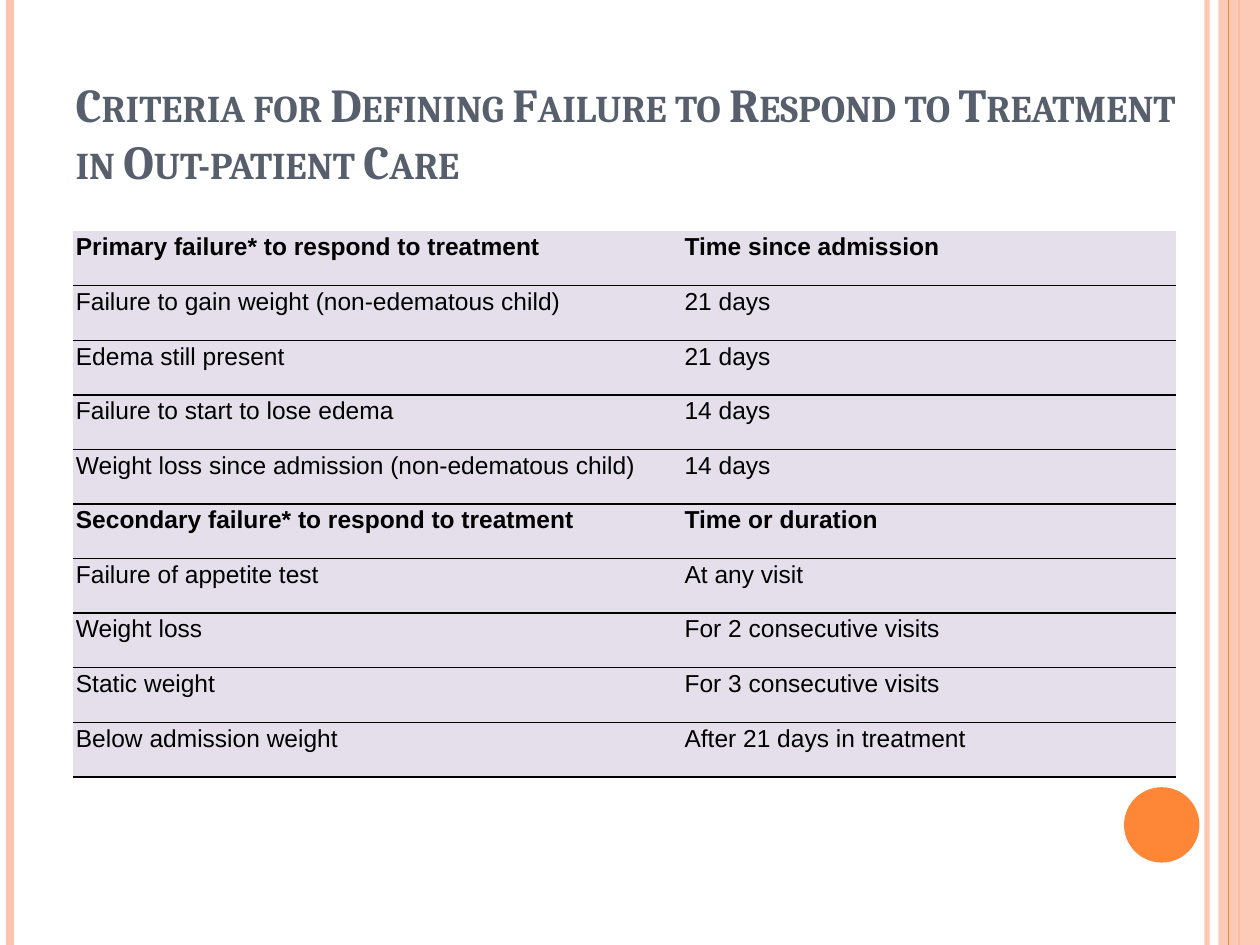
import dataclasses

import lxml.etree
import pptx
import pptx.dml.color
import pptx.enum.shapes
import pptx.enum.text
import pptx.oxml
import pptx.oxml.ns
import pptx.util

Cm, Pt = pptx.util.Cm, pptx.util.Pt
qn = pptx.oxml.ns.qn


@dataclasses.dataclass(frozen=True)
class Theme:
    """Colours, fonts and type sizes of the slide."""
    orange: str = "FE8637"
    peach: str = "FEC3AE"
    slate: str = "575F6D"
    lilac: str = "E5DFEC"
    black: str = "000000"
    title_font: str = "Cambria"
    body_font: str = "Arial"
    title_size: float = 27
    body_size: float = 14


THEME = Theme()
NO_GRID_STYLE = "{2D5ABB26-0587-4C30-8999-92F81FD0307C}"
TITLE = "Criteria for Defining Failure to Respond to Treatment in Out-patient Care"
CRITERIA = [
    ("Primary failure* to respond to treatment", "Time since admission"),
    ("Failure to gain weight (non-edematous child)", "21 days"),
    ("Edema still present", "21 days"),
    ("Failure to start to lose edema", "14 days"),
    ("Weight loss since admission (non-edematous child)", "14 days"),
    ("Secondary failure* to respond to treatment", "Time or duration"),
    ("Failure of appetite test", "At any visit"),
    ("Weight loss", "For 2 consecutive visits"),
    ("Static weight", "For 3 consecutive visits"),
    ("Below admission weight", "After 21 days in treatment"),
]
HEADING_ROWS = (0, 5)


def rgb(color):
    """Turn a hex string into a colour."""
    return pptx.dml.color.RGBColor.from_string(color)


def write(tf, text, *, size, font, color, bold=False, small_caps=False, align=None):
    """Put one formatted run of text into a text frame."""
    p = tf.paragraphs[0]
    p.alignment = align
    r = p.add_run()
    r.text = text
    r.font.size, r.font.name, r.font.bold = Pt(size), font, bold
    r.font.color.rgb = rgb(color)
    if small_caps:
        r._r.get_or_add_rPr().set("cap", "small")


def set_alpha(sp, percent):
    """Make the solid colour of a shape's fill or line partly transparent."""
    clr = next(sp._element.spPr.iter(qn("a:srgbClr")))
    lxml.etree.SubElement(clr, qn("a:alpha")).set("val", str(percent * 1000))


def add_stripe(s, x, top, height, color, weight, alpha=None):
    """Draw a vertical line."""
    straight = pptx.enum.shapes.MSO_CONNECTOR.STRAIGHT
    line = s.shapes.add_connector(straight, Cm(x), Cm(top), Cm(x), Cm(top + height))
    line.line.color.rgb, line.line.width = rgb(color), Pt(weight)
    lxml.etree.SubElement(line._element.spPr, qn("a:effectLst"))
    if alpha:
        set_alpha(line, alpha)


def add_solid(s, kind, left, top, width, height, color):
    """Draw a filled shape without an outline."""
    sp = s.shapes.add_shape(kind, Cm(left), Cm(top), Cm(width), Cm(height))
    sp.shadow.inherit = False
    sp.fill.solid()
    sp.fill.fore_color.rgb = rgb(color)
    sp.line.fill.background()
    return sp


def add_frame(s, left, top, width, height):
    """Draw the side stripes, the right band and the disc."""
    kinds = pptx.enum.shapes.MSO_SHAPE
    right = left + width
    add_stripe(s, right - 1.07, top, height, THEME.peach, 3, alpha=93)
    add_stripe(s, left + 0.2, top, height, THEME.peach, 4.5)
    add_stripe(s, right - 0.42, top, height, THEME.orange, 1.5)
    band = add_solid(s, kinds.RECTANGLE, right - 0.84, top, 0.84, height, THEME.peach)
    set_alpha(band, 87)
    add_stripe(s, right - 0.64, top, height, THEME.orange, 0.75)
    add_solid(s, kinds.OVAL, right - 2.74, top + height - 3.18, 1.52, 1.52, THEME.orange)


def place_title(s, left, top, width, height):
    """Move and fill the title placeholder."""
    sp = s.shapes.title
    sp.left, sp.top, sp.width, sp.height = Cm(left), Cm(top), Cm(width), Cm(height)
    tf = sp.text_frame
    tf.word_wrap = True
    tf.auto_size = pptx.enum.text.MSO_AUTO_SIZE.NONE
    tf.vertical_anchor = pptx.enum.text.MSO_ANCHOR.BOTTOM
    write(tf, TITLE, size=THEME.title_size, font=THEME.title_font, color=THEME.slate,
          bold=True, small_caps=True, align=pptx.enum.text.PP_ALIGN.LEFT)


def rule_below(cell):
    """Give a cell a thin bottom border."""
    border = pptx.oxml.parse_xml(
        f'<a:lnB {pptx.oxml.ns.nsdecls("a")} w="{Pt(1)}"><a:solidFill>'
        f'<a:srgbClr val="{THEME.black}"/></a:solidFill></a:lnB>')
    cell._tc.get_or_add_tcPr().insert(0, border)


def add_criteria(s, left, top, width, height):
    """Draw the table of failure criteria."""
    frame = s.shapes.add_table(len(CRITERIA), 2, Cm(left), Cm(top), Cm(width), Cm(height))
    table = frame.table
    table.first_row = table.horz_banding = False
    next(table._tbl.iter(qn("a:tableStyleId"))).text = NO_GRID_STYLE
    first = 12.27
    table.columns[0].width, table.columns[1].width = Cm(first), Cm(width - first)
    for i, texts in enumerate(CRITERIA):
        table.rows[i].height = Cm(height / len(CRITERIA))
        for cell, text in zip(table.rows[i].cells, texts):
            cell.margin_left = cell.margin_right = Cm(0.05)
            cell.margin_top = cell.margin_bottom = Cm(0.05)
            cell.fill.solid()
            cell.fill.fore_color.rgb = rgb(THEME.lilac)
            rule_below(cell)
            write(cell.text_frame, text, size=THEME.body_size, font=THEME.body_font,
                  color=THEME.black, bold=i in HEADING_ROWS,
                  align=pptx.enum.text.PP_ALIGN.JUSTIFY)


def main():
    """Build and save the slide."""
    prs = pptx.Presentation()
    prs.slide_width, prs.slide_height = Cm(25.4), Cm(19.05)
    s = prs.slides.add_slide(prs.slide_layouts[5])
    add_frame(s, 0, 0, 25.4, 19.05)
    place_title(s, 1.27, 0.76, 22.86, 3.18)
    add_criteria(s, 1.48, 4.66, 22.23, 11)
    prs.save("out.pptx")


if __name__ == "__main__":
    main()
